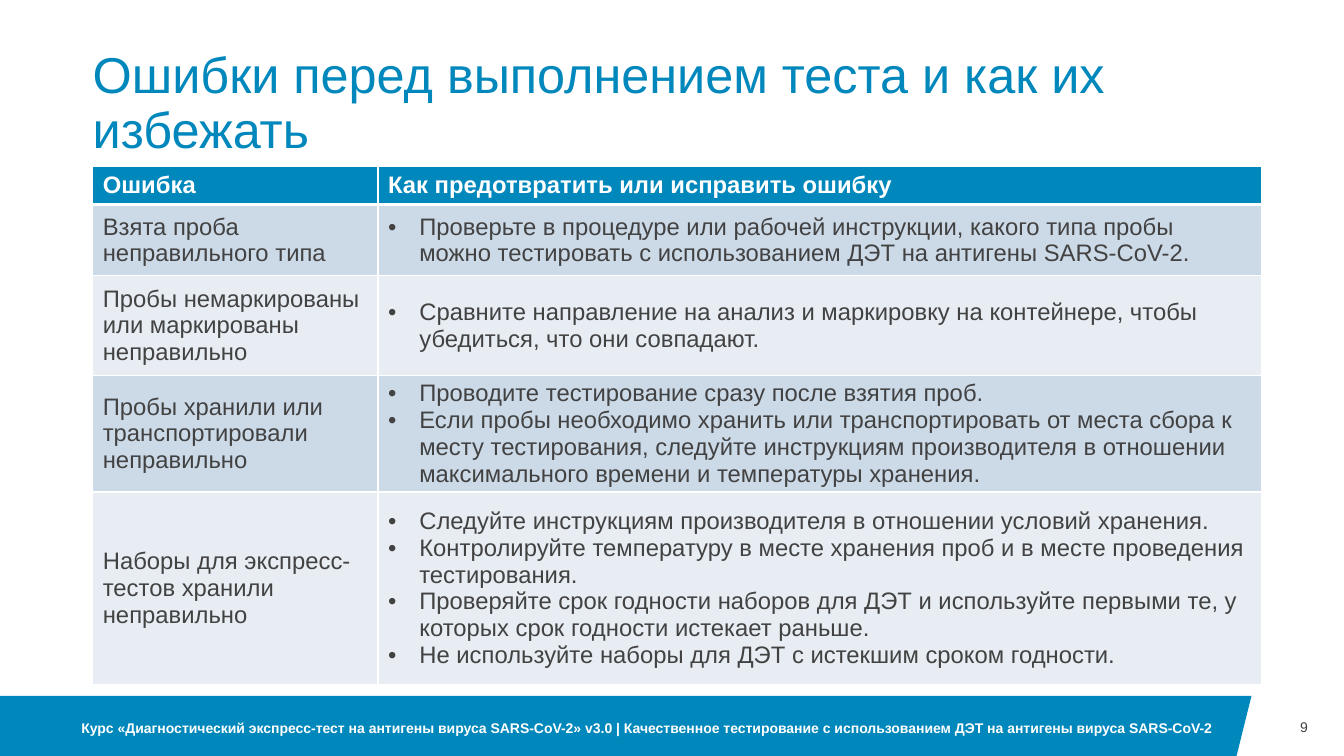
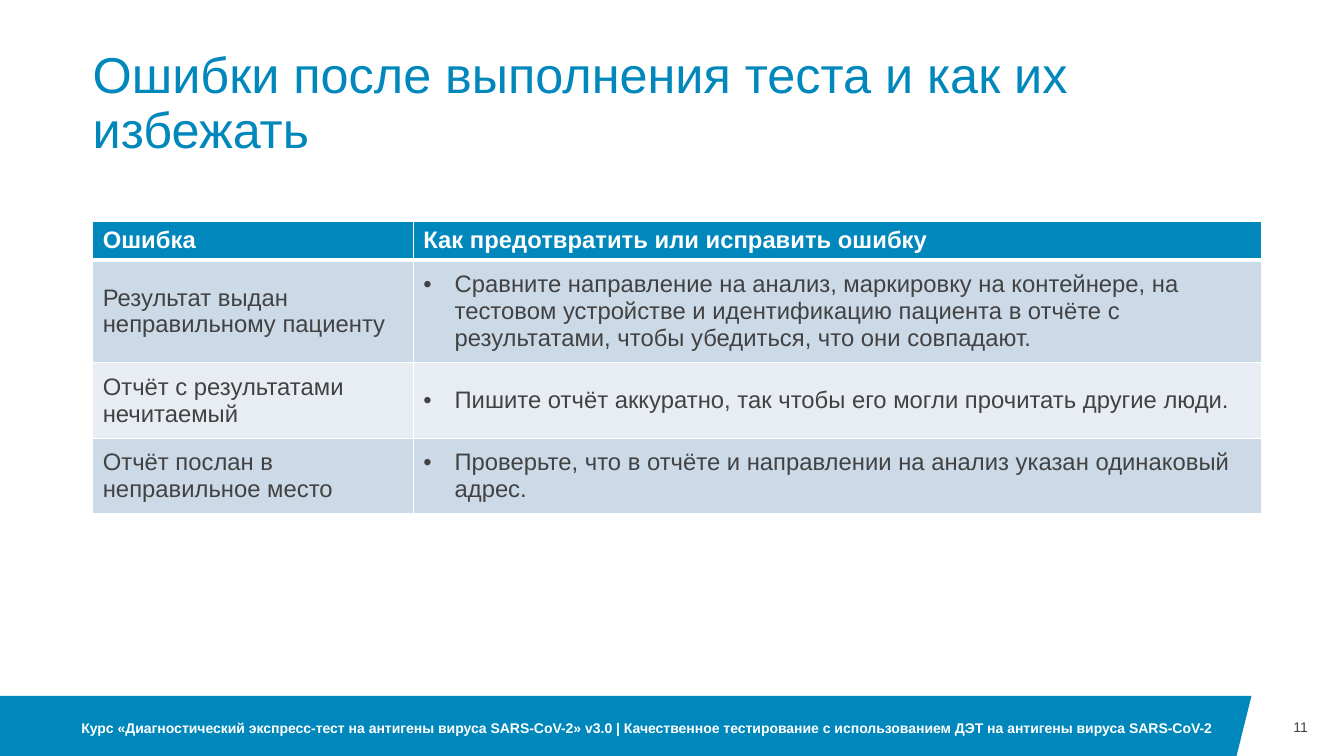
"""Build two slides with tables of testing errors and how to prevent them."""
from dataclasses import dataclass

from lxml import etree
from pptx import Presentation
from pptx.dml.color import RGBColor
from pptx.enum.text import MSO_ANCHOR, MSO_AUTO_SIZE, PP_ALIGN
from pptx.oxml.ns import qn
from pptx.slide import Slide
from pptx.table import _Cell
from pptx.text.text import TextFrame
from pptx.util import Pt

MIDDLE, BOTTOM = MSO_ANCHOR.MIDDLE, MSO_ANCHOR.BOTTOM
LEFT, RIGHT = PP_ALIGN.LEFT, PP_ALIGN.RIGHT
NO_FIT = MSO_AUTO_SIZE.NONE
TITLE_ONLY = 5

FONT = "Arial"
COLORS = {
    "accent": "0087BC",
    "text": "424242",
    "white": "FFFFFF",
    "band_dark": "CCD9E7",
    "band_light": "E7EDF3",
}
SLIDE_WIDTH, SLIDE_HEIGHT = 960, 540
MARGIN = 66.24
TABLE_WIDTH = 835.2
BAND_TOP = 497
BAND_OUTLINE = [(0, BAND_TOP), (894, BAND_TOP), (883.3, SLIDE_HEIGHT), (0, SLIDE_HEIGHT)]
BULLET_INDENT = 22.32
THIN, THICK = 1, 3
HEADINGS = ("Ошибка", "Как предотвратить или исправить ошибку")
FOOTER = (
    "Курс «Диагностический экспресс-тест на антигены вируса SARS-CoV-2» v3.0 | "
    "Качественное тестирование с использованием ДЭТ на антигены вируса SARS-CoV-2"
)


@dataclass(frozen=True)
class ErrorRow:
    """One error, its remedies and the height of its row."""

    error: str
    remedies: tuple[str, ...]
    height: float


@dataclass(frozen=True)
class ErrorSlide:
    """Content and table geometry of one slide."""

    title: str
    number: int
    table_top: float
    error_width: float
    header_height: float
    rows: tuple[ErrorRow, ...]


SLIDES = (
    ErrorSlide(
        "Ошибки перед выполнением теста и как их избежать", 9, 119, 203.8, 27,
        (
            ErrorRow(
                "Взята проба неправильного типа",
                ("Проверьте в процедуре или рабочей инструкции, какого типа пробы можно "
                 "тестировать с использованием ДЭТ на антигены SARS-CoV-2.",),
                51,
            ),
            ErrorRow(
                "Пробы немаркированы или маркированы неправильно",
                ("Сравните направление на анализ и маркировку на контейнере, чтобы "
                 "убедиться, что они совпадают.",),
                71,
            ),
            ErrorRow(
                "Пробы хранили или транспортировали неправильно",
                ("Проводите тестирование сразу после взятия проб.",
                 "Если пробы необходимо хранить или транспортировать от места сбора к "
                 "месту тестирования, следуйте инструкциям производителя в отношении "
                 "максимального времени и температуры хранения."),
                81.5,
            ),
            ErrorRow(
                "Наборы для экспресс-тестов хранили неправильно",
                ("Следуйте инструкциям производителя в отношении условий хранения.",
                 "Контролируйте температуру в месте хранения проб и в месте проведения "
                 "тестирования.",
                 "Проверяйте срок годности наборов для ДЭТ и используйте первыми те, у "
                 "которых срок годности истекает раньше.",
                 "Не используйте наборы для ДЭТ с истекшим сроком годности."),
                137.5,
            ),
        ),
    ),
    ErrorSlide(
        "Ошибки после выполнения теста и как их избежать", 11, 158, 229, 27.5,
        (
            ErrorRow(
                "Результат выдан неправильному пациенту",
                ("Сравните направление на анализ, маркировку на контейнере, на тестовом "
                 "устройстве и идентификацию пациента в отчёте с результатами, чтобы "
                 "убедиться, что они совпадают.",),
                73.5,
            ),
            ErrorRow(
                "Отчёт с результатами нечитаемый",
                ("Пишите отчёт аккуратно, так чтобы его могли прочитать другие люди.",),
                54,
            ),
            ErrorRow(
                "Отчёт послан в неправильное место",
                ("Проверьте, что в отчёте и направлении на анализ указан одинаковый "
                 "адрес.",),
                54,
            ),
        ),
    ),
)


def rgb(name: str) -> RGBColor:
    """Return the named colour."""
    return RGBColor.from_string(COLORS[name])


def write(
    frame: TextFrame, *texts: str, size: float, color: str = "text", bold: bool = False,
    align: PP_ALIGN = LEFT, line_spacing: float = 1.0, bulleted: bool = False,
) -> None:
    """Fill a text frame with one formatted paragraph for each text."""
    frame.word_wrap = True
    for index, text in enumerate(texts):
        paragraph = frame.add_paragraph() if index else frame.paragraphs[0]
        paragraph.alignment = align
        paragraph.line_spacing = line_spacing
        run = paragraph.add_run()
        run.text = text
        run.font.name = FONT
        run.font.size = Pt(size)
        run.font.bold = bold
        run.font.color.rgb = rgb(color)
        if bulleted:
            properties = paragraph._p.get_or_add_pPr()
            properties.set("marL", str(Pt(BULLET_INDENT)))
            properties.set("indent", str(-Pt(BULLET_INDENT)))
            etree.SubElement(properties, qn("a:buFont"), typeface=FONT)
            etree.SubElement(properties, qn("a:buChar"), char="•")


def set_frame(frame: TextFrame, anchor: MSO_ANCHOR) -> None:
    """Remove the insets of a text frame and anchor its text."""
    frame.auto_size = NO_FIT
    frame.vertical_anchor = anchor
    frame.margin_left = frame.margin_right = frame.margin_top = frame.margin_bottom = 0


def add_label(
    slide: Slide, text: str, left: float, top: float, width: float, height: float,
    **text_format,
) -> None:
    """Add a vertically centred text box."""
    label = slide.shapes.add_textbox(Pt(left), Pt(top), Pt(width), Pt(height))
    set_frame(label.text_frame, MIDDLE)
    write(label.text_frame, text, **text_format)


def set_title(slide: Slide, text: str) -> None:
    """Place and format the slide title."""
    title = slide.shapes.title
    title.left, title.top, title.width, title.height = Pt(MARGIN), Pt(39.6), Pt(828), Pt(74.2)
    set_frame(title.text_frame, BOTTOM)
    write(title.text_frame, text, size=36, color="accent", line_spacing=0.9)


def add_footer(slide: Slide, number: int) -> None:
    """Draw the footer band, the course name and the slide number."""
    start, *corners = [(Pt(x), Pt(y)) for x, y in BAND_OUTLINE]
    builder = slide.shapes.build_freeform(*start)
    builder.add_line_segments(corners, close=True)
    band = builder.convert_to_shape()
    band.shadow.inherit = False
    band.fill.solid()
    band.fill.fore_color.rgb = rgb("accent")
    band.line.fill.background()
    add_label(slide, FOOTER, 58.1, 500.4, 843, 39.6, size=10, color="white", bold=True)
    add_label(slide, str(number), 894, BAND_TOP, 40.3, 45, size=10, align=RIGHT)


def style_cell(cell: _Cell, fill: str, top: float = THIN, bottom: float = THIN) -> None:
    """Set the white borders, the fill and the anchor of a cell."""
    properties = cell._tc.get_or_add_tcPr()
    for side, width in (("L", THIN), ("R", THIN), ("T", top), ("B", bottom)):
        border = etree.SubElement(properties, qn(f"a:ln{side}"), w=str(Pt(width)))
        solid = etree.SubElement(border, qn("a:solidFill"))
        etree.SubElement(solid, qn("a:srgbClr"), val=COLORS["white"])
    cell.fill.solid()
    cell.fill.fore_color.rgb = rgb(fill)
    cell.vertical_anchor = MIDDLE


def add_error_table(slide: Slide, content: ErrorSlide) -> None:
    """Add the table of errors and remedies."""
    heights = [content.header_height, *(row.height for row in content.rows)]
    table = slide.shapes.add_table(
        len(heights), len(HEADINGS), Pt(MARGIN), Pt(content.table_top),
        Pt(TABLE_WIDTH), Pt(sum(heights)),
    ).table
    table.horz_banding = False
    table.columns[0].width = Pt(content.error_width)
    table.columns[1].width = Pt(TABLE_WIDTH - content.error_width)
    for table_row, height in zip(table.rows, heights):
        table_row.height = Pt(height)
    for column, heading in enumerate(HEADINGS):
        cell = table.cell(0, column)
        style_cell(cell, "accent", bottom=THICK)
        write(cell.text_frame, heading, size=17, color="white", bold=True)
    for index, row in enumerate(content.rows, start=1):
        fill = "band_dark" if index % 2 else "band_light"
        for column, texts in enumerate(((row.error,), row.remedies)):
            cell = table.cell(index, column)
            style_cell(cell, fill, top=THICK if index == 1 else THIN)
            write(cell.text_frame, *texts, size=17, bulleted=column == 1)


def main() -> None:
    """Build and save the presentation."""
    presentation = Presentation()
    presentation.slide_width, presentation.slide_height = Pt(SLIDE_WIDTH), Pt(SLIDE_HEIGHT)
    for content in SLIDES:
        slide = presentation.slides.add_slide(presentation.slide_layouts[TITLE_ONLY])
        set_title(slide, content.title)
        add_footer(slide, content.number)
        add_error_table(slide, content)
    presentation.save("out.pptx")


if __name__ == "__main__":
    main()
